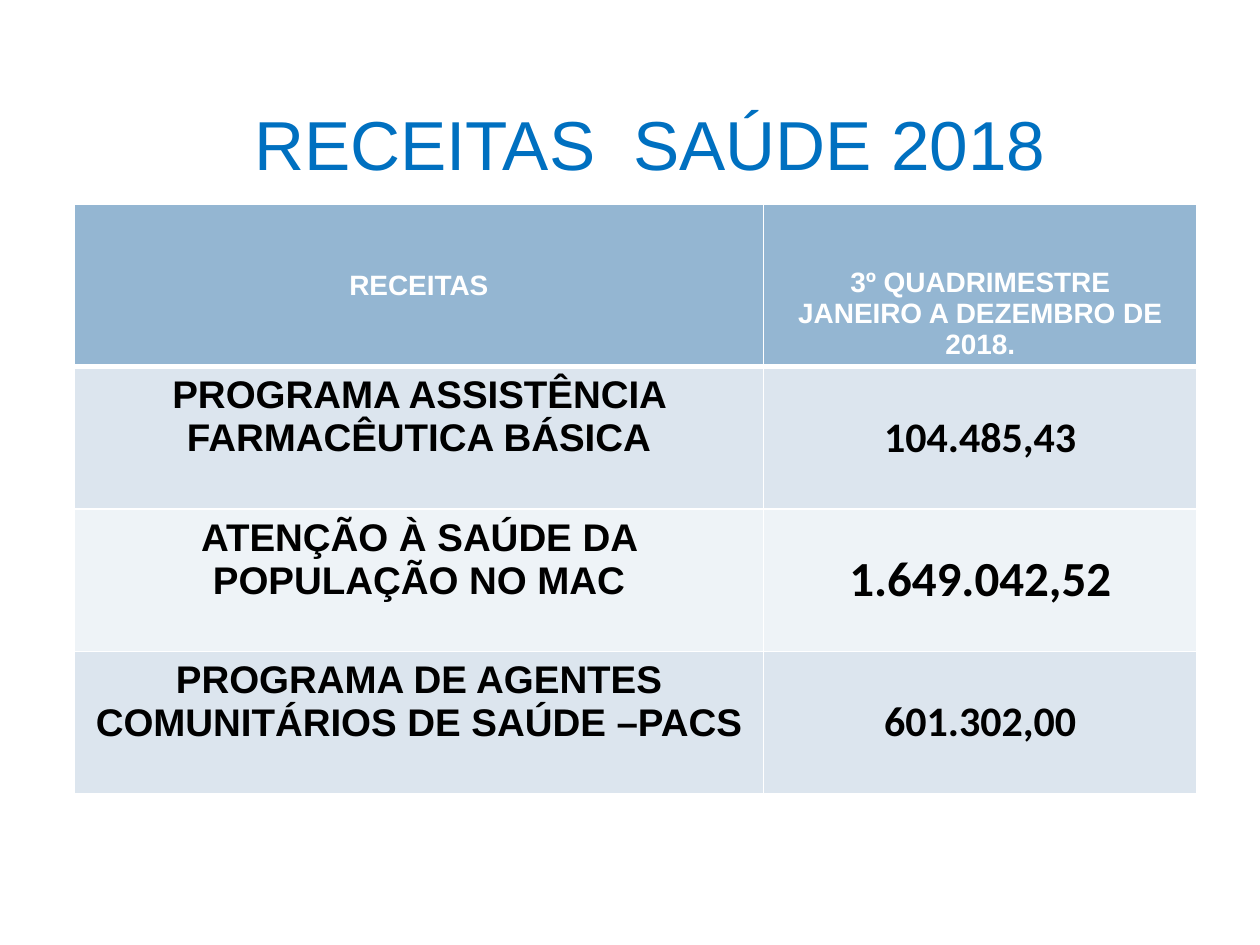
from lxml import etree
from pptx import Presentation
from pptx import util as u
from pptx.dml.color import RGBColor
from pptx.enum import text
from pptx.oxml import ns

BLUE = RGBColor(0x00, 0x70, 0xC0)
HEADER_FILL = RGBColor(0x94, 0xB6, 0xD2)
BAND_FILLS = (RGBColor(0xDC, 0xE5, 0xEE), RGBColor(0xEE, 0xF3, 0xF7))
WHITE = RGBColor(0xFF, 0xFF, 0xFF)
BLACK = RGBColor(0x00, 0x00, 0x00)

MIDDLE = text.MSO_ANCHOR.MIDDLE
BOTTOM = text.MSO_ANCHOR.BOTTOM

HEADERS = (
    ("RECEITAS", MIDDLE),
    ("3º QUADRIMESTRE\nJANEIRO A DEZEMBRO DE 2018.", BOTTOM),
)
REVENUES = (
    ("PROGRAMA ASSISTÊNCIA FARMACÊUTICA BÁSICA", "104.485,43", 24),
    ("ATENÇÃO À SAÚDE DA POPULAÇÃO NO MAC", "1.649.042,52", 28),
    ("PROGRAMA DE AGENTES COMUNITÁRIOS DE SAÚDE –PACS", "601.302,00", 24),
)
COLUMN_WIDTHS = (5.47, 3.44)
HEADER_HEIGHT = 1.29
ROW_HEIGHT = 1.13


class SlideBuilder:
    header_style = {"name": "Arial", "size": 16, "bold": True, "color": WHITE}
    label_style = {"name": "Arial", "size": 22, "bold": True, "color": BLACK}
    value_style = {"name": "Calibri", "bold": True, "color": BLACK}
    title_style = {"name": "Arial", "size": 39.6, "color": BLUE}

    def __init__(self, presentation):
        self.slide = presentation.slides.add_slide(presentation.slide_layouts[5])

    def fill_text(self, frame, content, style):
        """Fill a text frame with centred paragraphs, one per line of content."""
        frame.text = content
        for paragraph in frame.paragraphs:
            paragraph.alignment = text.PP_ALIGN.CENTER
            for run in paragraph.runs:
                for key, value in style.items():
                    if key == "color":
                        run.font.color.rgb = value
                    else:
                        setattr(run.font, key, u.Pt(value) if key == "size" else value)

    def title(self, content, left, top, width, height):
        shape = self.slide.shapes.title
        box = {"left": left, "top": top, "width": width, "height": height}
        for key, value in box.items():
            setattr(shape, key, u.Inches(value))
        shape.text_frame.vertical_anchor = MIDDLE
        shape.text_frame.auto_size = text.MSO_AUTO_SIZE.NONE
        self.fill_text(shape.text_frame, content, self.title_style)

    def borders(self, cell, bottom_width, top_width):
        widths = {"lnL": 1, "lnR": 1, "lnT": top_width, "lnB": bottom_width}
        properties = cell._tc.get_or_add_tcPr()
        for index, (tag, width) in enumerate(widths.items()):
            line = etree.Element(ns.qn(f"a:{tag}"), w=str(u.Pt(width)))
            fill = etree.SubElement(line, ns.qn("a:solidFill"))
            etree.SubElement(fill, ns.qn("a:srgbClr"), val=str(WHITE))
            properties.insert(index, line)

    def cell(self, cell, content, style, fill, anchor=MIDDLE, bottom_width=1, top_width=1):
        self.fill_text(cell.text_frame, content, style)
        cell.vertical_anchor = anchor
        cell.fill.solid()
        cell.fill.fore_color.rgb = fill
        self.borders(cell, bottom_width, top_width)

    def revenue_table(self, left, top):
        heights = [HEADER_HEIGHT] + [ROW_HEIGHT] * len(REVENUES)
        table = self.slide.shapes.add_table(
            len(heights), len(COLUMN_WIDTHS), u.Inches(left), u.Inches(top),
            u.Inches(sum(COLUMN_WIDTHS)), u.Inches(sum(heights))).table
        for column, width in zip(table.columns, COLUMN_WIDTHS):
            column.width = u.Inches(width)
        for row, height in zip(table.rows, heights):
            row.height = u.Inches(height)

        for index, (header, anchor) in enumerate(HEADERS):
            self.cell(table.cell(0, index), header, self.header_style,
                      HEADER_FILL, anchor, bottom_width=3)
        for index, (label, value, size) in enumerate(REVENUES):
            fill = BAND_FILLS[index % 2]
            top_width = 1 if index else 3
            label_cell, value_cell = table.rows[index + 1].cells
            self.cell(label_cell, label, self.label_style, fill, top_width=top_width)
            label_cell.margin_bottom = u.Inches(0.38)
            self.cell(value_cell, value, {**self.value_style, "size": size}, fill,
                      top_width=top_width)


def main():
    presentation = Presentation()
    presentation.slide_width = u.Inches(10)
    presentation.slide_height = u.Inches(7.5)
    builder = SlideBuilder(presentation)
    builder.title("RECEITAS  SAÚDE 2018", 0.62, 0.78, 9.08, 0.71)
    builder.revenue_table(0.59, 1.62)
    presentation.save("out.pptx")


if __name__ == "__main__":
    main()
